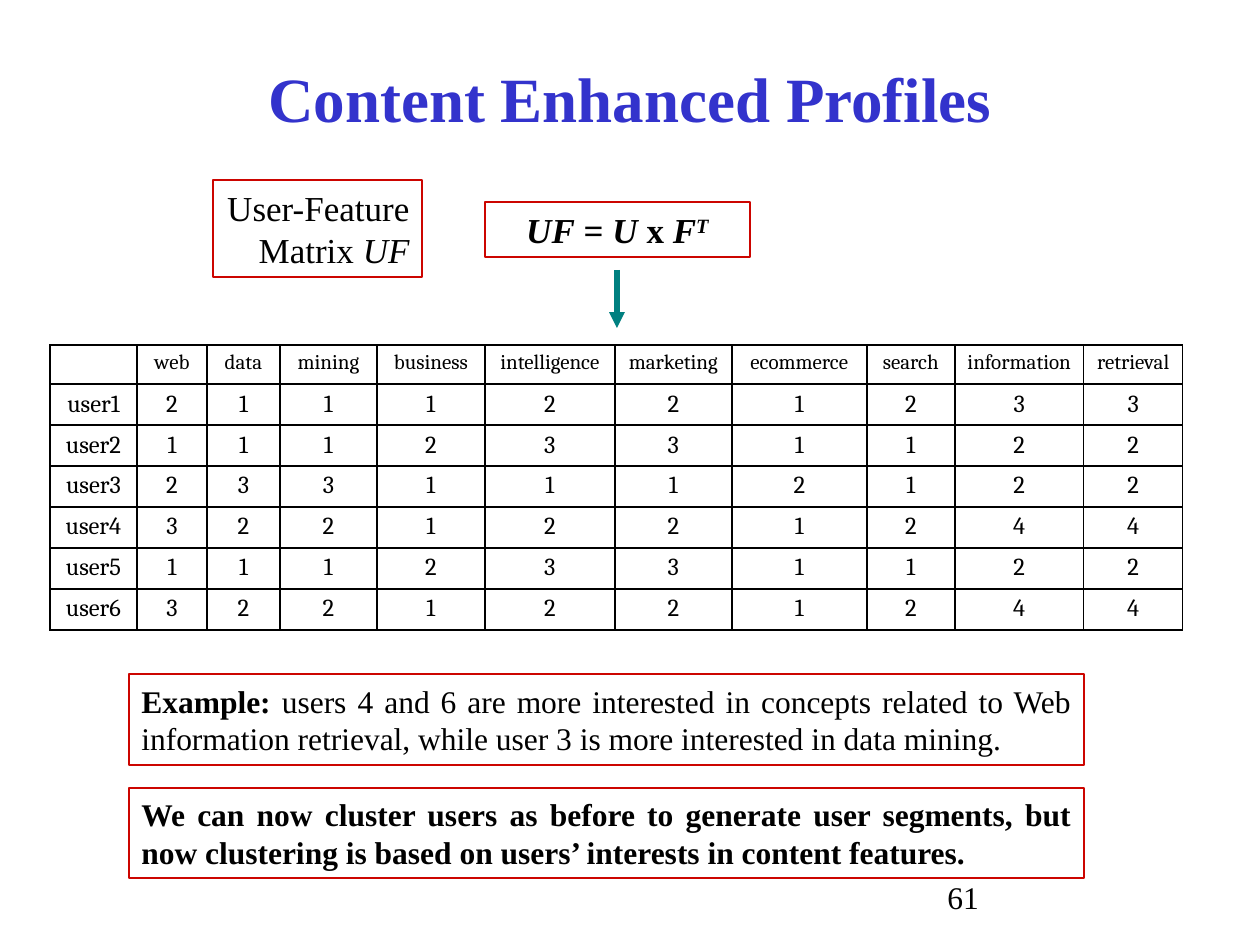
from lxml.etree import SubElement
from pptx import Presentation
from pptx.dml.color import RGBColor
from pptx.enum.shapes import MSO_CONNECTOR as Connector, MSO_SHAPE as Shape
from pptx.enum.text import MSO_ANCHOR as Anchor, MSO_AUTO_SIZE as AutoSize, PP_ALIGN as Align
from pptx.oxml.ns import qn
from pptx.util import Emu, Pt

TERMS = ["web", "data", "mining", "business", "intelligence", "marketing",
         "ecommerce", "search", "information", "retrieval"]
USER_WEIGHTS = ["2111221233", "1112331122", "2331112122",
                "3221221244", "1112331122", "3221221244"]
COLUMN_WIDTHS = [87, 70, 73, 97, 108, 130, 117, 135, 88, 129, 99]


def px(length):
    return Emu(round(length * 914400 / 126))


def color(value):
    return RGBColor.from_string(value)


class SlideBuilder:
    font = "Times New Roman"
    table_font = "Cambria"
    ink = "000000"
    title_color = "3333CC"
    frame_color = "CC0500"
    arrow_color = "008080"

    def __init__(self, presentation):
        self.slide = presentation.slides.add_slide(presentation.slide_layouts[6])

    def style(self, paragraph, size, align, bold=None, name=None, ink=None):
        paragraph.alignment = align
        font = paragraph.font
        font.size, font.bold, font.name = Pt(size), bold, name or self.font
        font.color.rgb = color(ink or self.ink)

    def add_lines(self, frame, lines, size, align, bold=None, ink=None):
        for index, runs in enumerate(lines):
            paragraph = frame.add_paragraph() if index else frame.paragraphs[0]
            self.style(paragraph, size, align, bold, ink=ink)
            for text, marks in runs:
                run = paragraph.add_run()
                run.text = text
                if "b" in marks:
                    run.font.bold = True
                if "i" in marks:
                    run.font.italic = True
                if "^" in marks:
                    run._r.get_or_add_rPr().set("baseline", "30000")

    def label(self, box, text, size, align, bold=None, ink=None):
        frame = self.slide.shapes.add_textbox(*map(px, box)).text_frame
        frame.word_wrap = True
        frame.vertical_anchor = Anchor.MIDDLE
        self.add_lines(frame, [[(text, "")]], size, align, bold, ink)

    def framed(self, box, lines, size, align, bold=None, wrap=True):
        shape = self.slide.shapes.add_shape(Shape.RECTANGLE, *map(px, box))
        shape.shadow.inherit = False
        shape.fill.background()
        shape.line.color.rgb = color(self.frame_color)
        shape.line.width = Pt(1.5)
        frame = shape.text_frame
        frame.word_wrap = wrap
        frame.auto_size = AutoSize.SHAPE_TO_FIT_TEXT
        frame.vertical_anchor = Anchor.MIDDLE
        self.add_lines(frame, lines, size, align, bold)

    def arrow(self, x1, y1, x2, y2):
        connector = self.slide.shapes.add_connector(
            Connector.STRAIGHT, px(x1), px(y1), px(x2), px(y2))
        connector.line.color.rgb = color(self.arrow_color)
        connector.line.width = Pt(3)
        SubElement(connector.line._get_or_add_ln(), qn("a:tailEnd"), type="triangle")
        SubElement(connector._element.spPr, qn("a:effectLst"))

    def border(self, cell):
        properties = cell._tc.get_or_add_tcPr()
        for position, side in enumerate(("a:lnL", "a:lnR", "a:lnT", "a:lnB")):
            line = SubElement(properties, qn(side), w=str(Pt(1)))
            properties.insert(position, line)
            fill = SubElement(line, qn("a:solidFill"))
            SubElement(fill, qn("a:srgbClr"), val=self.ink)

    def table(self, left, top, widths, heights, rows):
        table = self.slide.shapes.add_table(
            len(rows), len(widths), px(left), px(top),
            px(sum(widths)), px(sum(heights))).table
        table.first_row = table.horz_banding = False
        for column, width in zip(table.columns, widths):
            column.width = px(width)
        for row, height, texts in zip(table.rows, heights, rows):
            row.height = px(height)
            for cell, text in zip(row.cells, texts):
                cell.text = text
                cell.fill.background()
                cell.margin_left = cell.margin_right = px(4)
                cell.margin_top = px(6 if text else 0)
                cell.margin_bottom = 0
                size = 12 if texts is rows[0] else 14
                self.style(cell.text_frame.paragraphs[0], size, Align.CENTER,
                           name=self.table_font)
                self.border(cell)


def main():
    presentation = Presentation()
    presentation.slide_width, presentation.slide_height = px(1260), px(945)
    builder = SlideBuilder(presentation)

    builder.label((935, 872, 262, 50), "61", 18, Align.LEFT)
    builder.label((63, 55, 1134, 84), "Content Enhanced Profiles", 36,
                  Align.CENTER, True, builder.title_color)

    rows = [["", *TERMS]]
    rows += [[f"user{number}", *weights]
             for number, weights in enumerate(USER_WEIGHTS, 1)]
    builder.table(50, 345, COLUMN_WIDTHS, [39] + [41] * len(USER_WEIGHTS), rows)

    builder.framed((213, 180, 209, 97),
                   [[("User-Feature", "")], [("Matrix ", ""), ("UF", "i")]],
                   20, Align.RIGHT, wrap=False)
    builder.arrow(617, 270, 617, 328)
    builder.framed((485, 202, 265, 55),
                   [[("UF", "i"), (" = ", ""), ("U ", "i"), ("x ", ""),
                     ("F", "i"), ("T", "i^")]],
                   20, Align.CENTER, True)
    builder.framed((129, 674, 955, 91),
                   [[("Example: ", "b"),
                     ("users 4 and 6 are more interested in concepts related to Web "
                      "information retrieval, while user 3 is more interested in "
                      "data mining.", "")]],
                   18, Align.JUSTIFY)
    builder.framed((129, 788, 955, 90),
                   [[("We can now cluster users as before to generate user segments, "
                      "but now clustering is based on users’ interests in content "
                      "features.", "")]],
                   18, Align.JUSTIFY, True)
    presentation.save("out.pptx")


if __name__ == "__main__":
    main()
